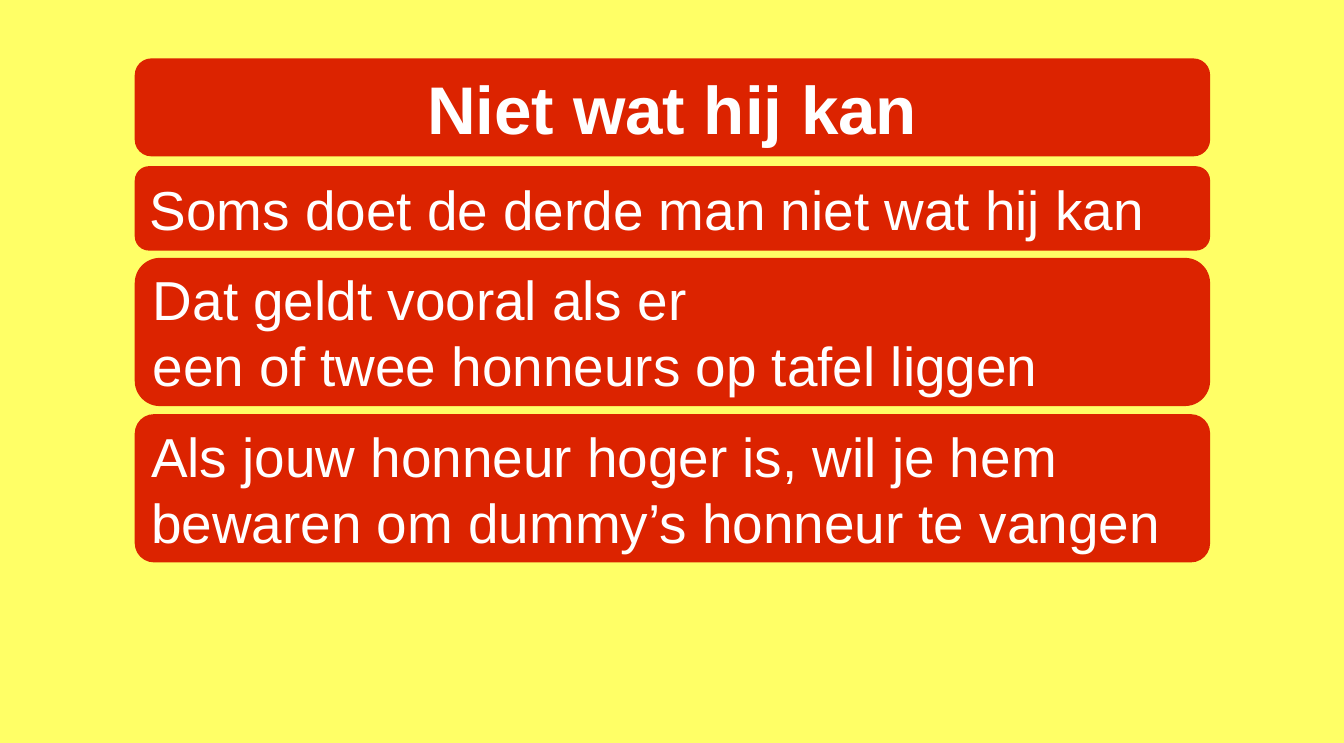
"""Build a slide with a title bar and three stacked statement bars."""
from pptx import Presentation
from pptx.dml.color import RGBColor
from pptx.enum.shapes import MSO_SHAPE
from pptx.enum.text import MSO_ANCHOR, PP_ALIGN
from pptx.util import Emu, Pt

ROUNDED = MSO_SHAPE.ROUNDED_RECTANGLE
MIDDLE = MSO_ANCHOR.MIDDLE
LEFT, CENTER = PP_ALIGN.LEFT, PP_ALIGN.CENTER

TITLE = "Niet wat hij kan"
STATEMENTS = [
    (["Soms doet de derde man niet wat hij kan"], 185, 94, 0.17),
    (["Dat geldt vooral als er", "een of twee honneurs op tafel liggen"], 287, 165, 0.17),
    (["Als jouw honneur hoger is, wil je hem bewaren om dummy’s honneur te vangen"], 461, 165, 0.13),
]
COLORS = {"background": "FFFF66", "bar": "DC2300", "text": "FFFFFF"}
FONT = "Arial"
PX = 9144
SLIDE_W, SLIDE_H = 1496, 827
BAR_X, BAR_W = 150, 1197
TITLE_Y, TITLE_H, TITLE_ROUNDING = 65, 109, 0.17
INSET_X, INSET_Y = 12, 6


def px(n):
    return Emu(n * PX)


def color(name):
    return RGBColor.from_string(COLORS[name])


def add_bar(slide, lines, y, h, rounding, size=44, align=LEFT, bold=False):
    sp = slide.shapes.add_shape(ROUNDED, px(BAR_X), px(y), px(BAR_W), px(h))
    sp.adjustments[0] = rounding
    sp.shadow.inherit = False
    sp.fill.solid()
    sp.fill.fore_color.rgb = color("bar")
    sp.line.fill.background()
    tf = sp.text_frame
    tf.word_wrap = True
    tf.vertical_anchor = MIDDLE
    tf.margin_left = tf.margin_right = px(INSET_X)
    tf.margin_top = tf.margin_bottom = px(INSET_Y)
    for i, line in enumerate(lines):
        p = tf.add_paragraph() if i else tf.paragraphs[0]
        p.alignment = align
        r = p.add_run()
        r.text = line
        r.font.name, r.font.size, r.font.bold = FONT, Pt(size), bold
        r.font.color.rgb = color("text")


prs = Presentation()
prs.slide_width, prs.slide_height = px(SLIDE_W), px(SLIDE_H)
slide = prs.slides.add_slide(prs.slide_layouts[6])
slide.background.fill.solid()
slide.background.fill.fore_color.rgb = color("background")

add_bar(slide, [TITLE], TITLE_Y, TITLE_H, TITLE_ROUNDING, 54, CENTER, True)
for lines, y, h, rounding in STATEMENTS:
    add_bar(slide, lines, y, h, rounding)

prs.save("out.pptx")
